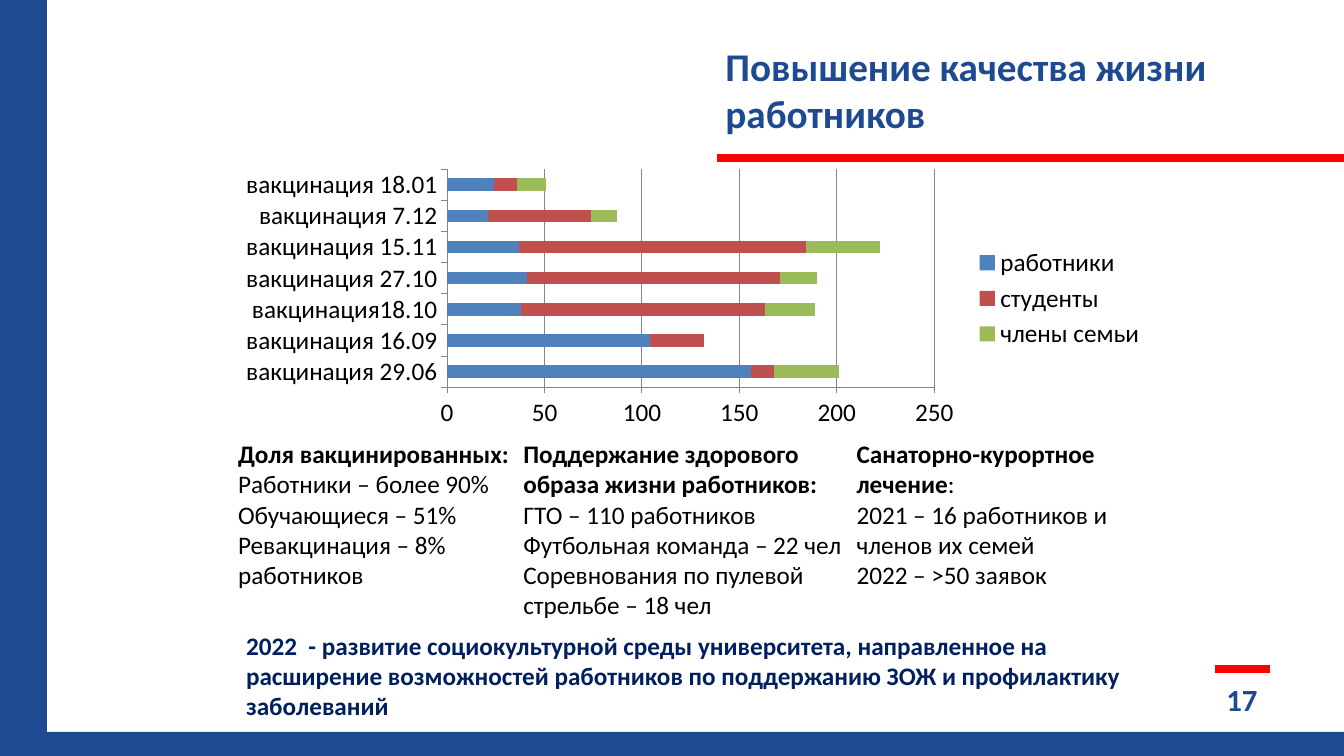
from lxml import etree
from pptx import Presentation
from pptx.chart.data import CategoryChartData
from pptx.dml.color import RGBColor
from pptx.enum.chart import XL_CHART_TYPE as Kind, XL_LEGEND_POSITION as Side
from pptx.enum.chart import XL_TICK_MARK as Tick
from pptx.enum.shapes import MSO_CONNECTOR as Link, MSO_SHAPE as Form
from pptx.enum.text import MSO_ANCHOR as Anchor, PP_ALIGN as Align
from pptx.oxml import parse_xml
from pptx.oxml.ns import nsdecls, qn
from pptx.util import Pt

PX = 9080  # EMU per px
BLUE, RED, NAVY, BLACK, GREY = "1E4A91", "FF0000", "002060", "000000", "868686"
color = RGBColor.from_string


def add_text(box, paras, size, tint, anchor=Anchor.TOP, align=Align.LEFT):
    """Add a wrapped text box; each paragraph is a list of (text, bold) runs."""
    frame = slide.shapes.add_textbox(*[n * PX for n in box]).text_frame
    frame.word_wrap = True
    frame.vertical_anchor = anchor
    for i, runs in enumerate(paras):
        para = frame.paragraphs[0] if i == 0 else frame.add_paragraph()
        para.alignment = align
        for text, bold in runs:
            run = para.add_run()
            run.text = text
            font = run.font
            font.name, font.size, font.bold = "Calibri", Pt(size), bold
            font.color.rgb = color(tint)


deck = Presentation()
deck.slide_width, deck.slide_height = 1343 * PX, 755 * PX
slide = deck.slides.add_slide(deck.slide_layouts[6])

# Frame bars and red rules
for box in [(0, 731, 1343, 24), (0, 0, 47, 755)]:
    bar = slide.shapes.add_shape(Form.RECTANGLE, *[n * PX for n in box])
    bar.shadow.inherit = False
    bar.fill.solid()
    bar.fill.fore_color.rgb = color(BLUE)
    bar.line.fill.background()
for x1, x2, y in [(716, 1343, 158), (1214, 1269, 668)]:
    rule = slide.shapes.add_connector(Link.STRAIGHT, x1 * PX, y * PX, x2 * PX, y * PX)
    rule.line.color.rgb = color(RED)
    rule.line.width = Pt(6)
    etree.SubElement(rule._element.spPr, qn("a:effectLst"))

add_text((715, 1, 598, 140), [[("Повышение качества жизни работников", True)]],
         28, BLUE, Anchor.BOTTOM)
add_text((1206, 679, 70, 39), [[("17", True)]], 22, BLUE, Anchor.MIDDLE, Align.CENTER)

# Vaccination chart
data = CategoryChartData()
data.categories = ["вакцинация 29.06", "вакцинация 16.09", "вакцинация18.10",
                   "вакцинация 27.10", "вакцинация 15.11", "вакцинация 7.12",
                   "вакцинация 18.01"]
groups = [("работники", "4F81BD", [156, 104, 38, 41, 37, 21, 24]),
          ("студенты", "C0504D", [12, 28, 125, 130, 147, 53, 12]),
          ("члены семьи", "9BBB59", [33, 0, 26, 19, 38, 13, 15])]
for name, tint, vals in groups:
    data.add_series(name, vals)
left, top, wide, high = 228, 163, 927, 270
chart = slide.shapes.add_chart(Kind.BAR_STACKED, left * PX, top * PX,
                               wide * PX, high * PX, data).chart
chart.has_title = False
chart.font.name, chart.font.size = "Calibri", Pt(18)
chart.font.color.rgb = color(BLACK)
chart.has_legend = True
chart.legend.position = Side.RIGHT
chart.legend.include_in_layout = False
plot = chart.plots[0]
plot.gap_width, plot.overlap, plot.vary_by_categories = 150, 100, False
for series, (name, tint, vals) in zip(plot.series, groups):
    series.format.fill.solid()
    series.format.fill.fore_color.rgb = color(tint)
scale = chart.value_axis
scale.minimum_scale, scale.maximum_scale, scale.major_unit = 0, 250, 50
scale.has_major_gridlines = True
for axis in (chart.category_axis, scale):
    axis.major_tick_mark = Tick.OUTSIDE
    axis.minor_tick_mark = Tick.NONE
for part in (chart.category_axis, scale, scale.major_gridlines):
    part.format.line.color.rgb = color(GREY)
    part.format.line.width = Pt(0.75)

# Fixed inner plot area, as shares of the chart
area = chart._chartSpace.chart.plotArea
for old in area.findall(qn("c:layout")):
    area.remove(old)
shares = {"x": (447 - left) / wide, "y": (169 - top) / high,
          "w": 487 / wide, "h": 218 / high}
modes = '<c:layoutTarget val="inner"/><c:xMode val="edge"/><c:yMode val="edge"/>'
sizes = "".join(f'<c:{key} val="{val:.3f}"/>' for key, val in shares.items())
area.insert(0, parse_xml(f'<c:layout {nsdecls("c")}><c:manualLayout>'
                         f'{modes}{sizes}</c:manualLayout></c:layout>'))

# Three columns of results
columns = [
    (228, 293, [[("Доля вакцинированных:", True)],
                [("Работники – более 90%", False)],
                [("Обучающиеся – 51%", False)],
                [("Ревакцинация – 8% работников", False)]]),
    (513, 348, [[("Поддержание здорового образа жизни работников:", True)],
                [("ГТО – 110 работников", False)],
                [("Футбольная команда – 22 чел", False)],
                [("Соревнования по пулевой стрельбе – 18 чел", False)]]),
    (846, 293, [[("Санаторно-курортное лечение", True), (":", False)],
                [("2021 – 16 работников и членов их семей", False)],
                [("2022 – >50 заявок", False)]]),
]
for x, width, paras in columns:
    add_text((x, 433, width, 193), paras, 18, BLACK)

goal = ("2022  - развитие социокультурной среды университета, направленное на "
        "расширение возможностей работников по поддержанию ЗОЖ и профилактику "
        "заболеваний")
add_text((236, 624, 960, 102), [[(goal, True)]], 18, NAVY)

deck.save("out.pptx")
